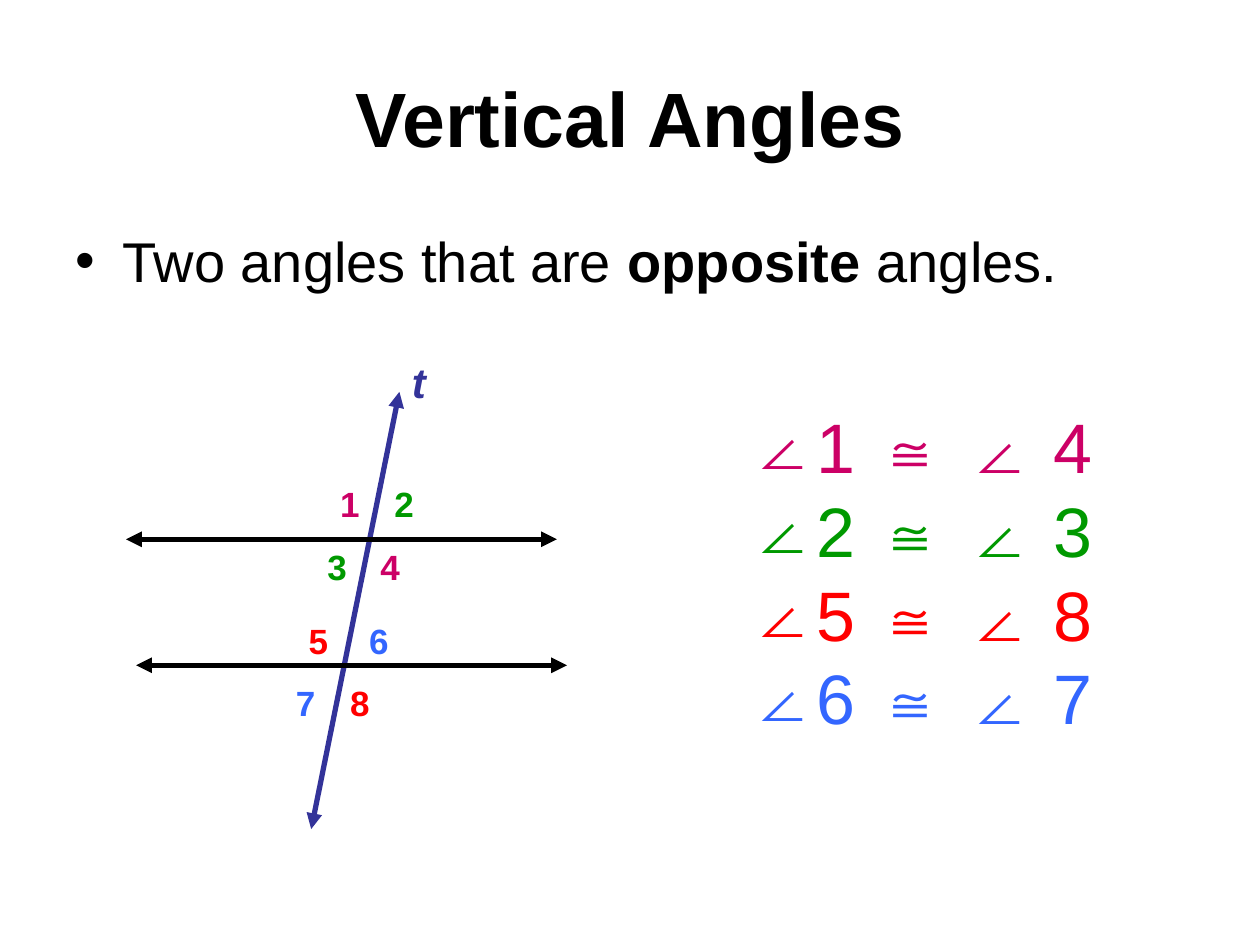
from lxml import etree
from pptx import Presentation
from pptx.dml.color import RGBColor
from pptx.enum.shapes import MSO_CONNECTOR
from pptx.enum.text import MSO_ANCHOR, PP_ALIGN
from pptx.oxml.ns import qn
from pptx.util import Pt

LINE = MSO_CONNECTOR.STRAIGHT
MIDDLE = MSO_ANCHOR.MIDDLE
CENTER = PP_ALIGN.CENTER

THEME = {
    "font": "Arial",
    "black": "000000", "navy": "333399", "pink": "CC0066",
    "green": "009900", "red": "FF0000", "blue": "3366FF",
    "title": 44, "body": 32, "pair": 40, "name": 24, "label": 20,
    "stroke": 3,
}

TITLE = "Vertical Angles"
BODY = [("Two angles that are ", False), ("opposite", True), (" angles.", False)]
PAIRS = [(1, 4, "pink"), (2, 3, "green"), (5, 8, "red"), (6, 7, "blue")]
CROSS = ((228.24, 223.92), (177.84, 473.76), "navy")
LEVELS = [((72, 308.16), (318.24, 308.16), "black"),
          ((77.76, 380.16), (324, 380.16), "black")]
ROWS = [(272, 187.2, 218.2), (308, 180, 210.3),
        (350.3, 169.2, 203.8), (386, 162, 193)]


def add_box(slide, left, top, width, height, wrap=True):
    box = slide.shapes.add_textbox(Pt(left), Pt(top), Pt(width), Pt(height))
    box.text_frame.word_wrap = wrap
    return box.text_frame


def set_font(par, size, color, bold=False):
    font = par.font
    font.name = THEME["font"]
    font.size = Pt(THEME[size])
    font.bold = bold
    font.color.rgb = RGBColor.from_string(THEME[color])


def add_bullet(par, char, indent=0):
    props = par._p.get_or_add_pPr()
    props.set("marL", str(Pt(indent)))
    props.set("indent", str(-Pt(indent)))
    etree.SubElement(props, qn("a:buFont"), typeface=THEME["font"])
    etree.SubElement(props, qn("a:buChar"), char=char)


def add_line(slide, start, end, color):
    line = slide.shapes.add_connector(LINE, *map(Pt, start + end))
    line.line.color.rgb = RGBColor.from_string(THEME[color])
    line.line.width = Pt(THEME["stroke"])
    for tag in ("a:headEnd", "a:tailEnd"):
        etree.SubElement(line.line._get_or_add_ln(), qn(tag), type="triangle")
    etree.SubElement(line._element.spPr, qn("a:effectLst"))


def add_title(slide):
    frame = add_box(slide, 36, 21.6, 648, 90)
    frame.vertical_anchor = MIDDLE
    par = frame.paragraphs[0]
    par.text = TITLE
    par.alignment = CENTER
    set_font(par, "title", "black", True)


def add_body(slide):
    par = add_box(slide, 36, 126, 648, 356.4).paragraphs[0]
    add_bullet(par, "•", 27)
    set_font(par, "body", "black")
    for text, bold in BODY:
        run = par.add_run()
        run.text = text
        run.font.bold = bold


def add_figure(slide):
    add_line(slide, *CROSS)
    for level in LEVELS:
        add_line(slide, *level)
    hues = {num: hue for *nums, hue in PAIRS for num in nums}
    for row, (top, *lefts) in enumerate(ROWS):
        for num, left in enumerate(lefts, 2 * row + 1):
            par = add_box(slide, left, top, 46.8, 47.5).paragraphs[0]
            par.text = str(num)
            set_font(par, "label", hues[num], True)
    par = add_box(slide, 228.24, 200.2, 22.3, 36, False).paragraphs[0]
    par.text = "t"
    set_font(par, "name", "navy", True)
    par.font.italic = True


def add_pairs(slide):
    frame = add_box(slide, 419.8, 226.8, 246.2, 247)
    for row, (one, two, hue) in enumerate(PAIRS):
        par = frame.add_paragraph() if row else frame.paragraphs[0]
        par.text = f"{one} ≅ ∠ {two}"
        add_bullet(par, "∠")
        set_font(par, "pair", hue)


def main():
    deck = Presentation()
    deck.slide_width, deck.slide_height = Pt(720), Pt(540)
    slide = deck.slides.add_slide(deck.slide_layouts[6])
    add_title(slide)
    add_body(slide)
    add_figure(slide)
    add_pairs(slide)
    deck.save("out.pptx")


if __name__ == "__main__":
    main()
